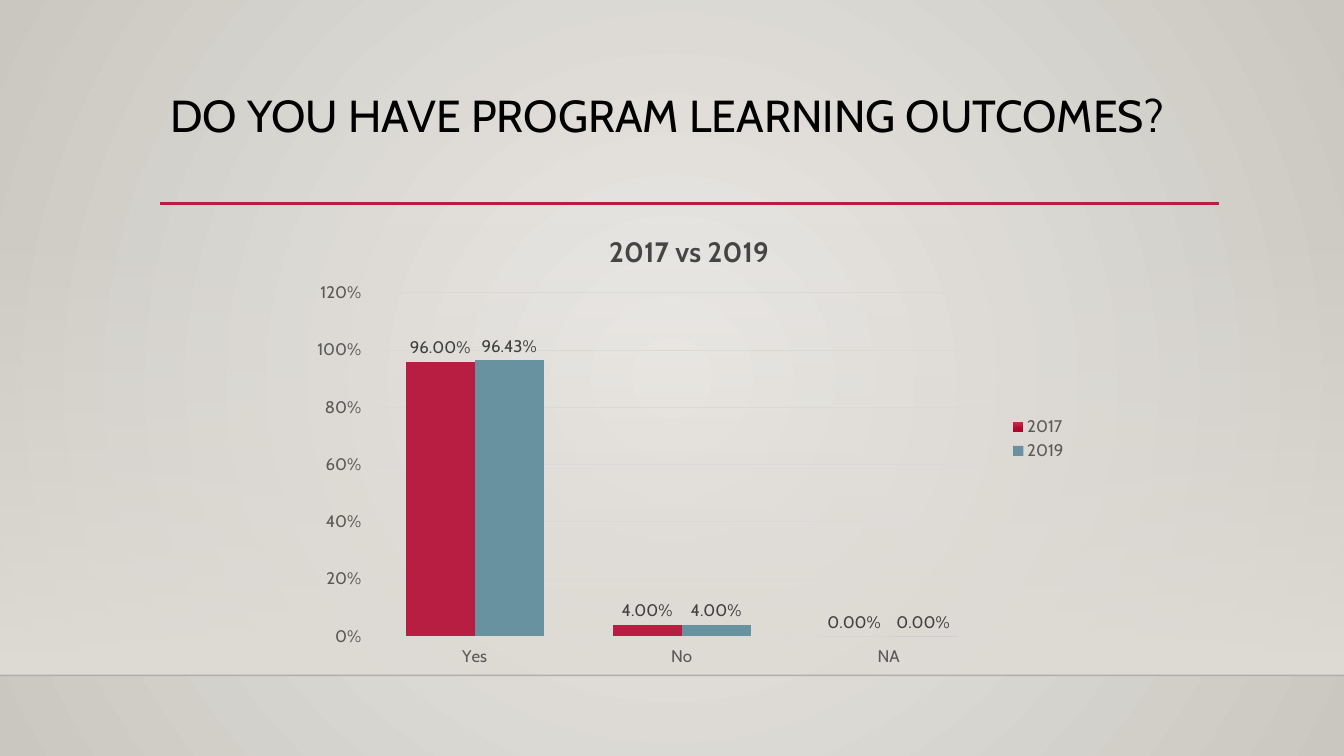
from lxml.etree import SubElement
from pptx import Presentation
from pptx.chart.data import CategoryChartData
from pptx.dml.color import RGBColor
from pptx.enum.chart import XL_CHART_TYPE, XL_LABEL_POSITION, XL_LEGEND_POSITION
from pptx.enum.shapes import MSO_CONNECTOR, MSO_SHAPE
from pptx.enum.text import MSO_ANCHOR
from pptx.oxml import parse_xml
from pptx.oxml.ns import nsdecls, qn
from pptx.util import Pt

FONT = "Cabin"
WIDTH, HEIGHT = 960, 540
RED, TEAL, SAND, GRID, GRAY = "B71E42", "6892A0", "DFDBD5", "D9D9D9", "595959"
LINEAR = '<a:lin ang="5400000" scaled="0"/>'
RADIAL = '<a:path path="circle"><a:fillToRect l="50000" t="50000" r="50000" b="50000"/></a:path>'


def color(value):
    return RGBColor.from_string(value)


def set_font(font, size, value, bold=False):
    font.name, font.size, font.bold = FONT, Pt(size), bold
    font.color.rgb = color(value)


def set_gradient(fill, parent, stops, direction):
    """Fill with (position, colour, opacity) stops, all in percent."""
    fill.solid()
    marks = "".join(
        f'<a:gs pos="{position * 1000}"><a:srgbClr val="{value}">'
        f'<a:alpha val="{opacity * 1000}"/></a:srgbClr></a:gs>'
        for position, value, opacity in stops)
    solid = parent.find(qn("a:solidFill"))
    parent.replace(solid, parse_xml(
        f'<a:gradFill {nsdecls("a")} rotWithShape="1">'
        f'<a:gsLst>{marks}</a:gsLst>{direction}</a:gradFill>'))


def add_rule(page, left, top, width, value, weight, opacity=100):
    rule = page.shapes.add_connector(
        MSO_CONNECTOR.STRAIGHT, Pt(left), Pt(top), Pt(left + width), Pt(top))
    rule.line.color.rgb = color(value)
    rule.line.width = Pt(weight)
    properties = rule._element.spPr
    if opacity < 100:
        shade = properties.find(".//" + qn("a:srgbClr"))
        SubElement(shade, qn("a:alpha"), val=str(opacity * 1000))
    SubElement(properties, qn("a:effectLst"))


def add_backdrop(page, left, top, width, height):
    # Radial page background
    fill = page.background.fill
    fill.solid()
    set_gradient(fill, page._element.find(".//" + qn("p:bgPr")),
                 [(0, "ECEAE7", 100), (100, "CAC7C1", 100)], RADIAL)
    # Band that fades in towards the floor line
    band = page.shapes.add_shape(
        MSO_SHAPE.RECTANGLE, Pt(left), Pt(top), Pt(width), Pt(height))
    band.shadow.inherit = False
    band.line.fill.background()
    set_gradient(band.fill, band._element.spPr,
                 [(0, SAND, 0), (100, SAND, 100)], LINEAR)
    add_rule(page, left, top + height, width, "000001", 1, opacity=20)


def add_heading(page, left, top, width, height, text):
    add_rule(page, left, top + height, width, RED, 2.5)
    box = page.shapes.add_textbox(Pt(left), Pt(top), Pt(width), Pt(height))
    box.text_frame.word_wrap = True
    box.text_frame.vertical_anchor = MSO_ANCHOR.TOP
    para = box.text_frame.paragraphs[0]
    para.text = text
    para.line_spacing = 0.9
    set_font(para.font, 32, "000000")


def layout(target, **places):
    """Return a manual chart layout with the given fractions."""
    inner = f'<c:layoutTarget val="{target}"/>' if target else ""
    modes = "".join(f'<c:{axis}Mode val="edge"/>' for axis in "xy")
    sizes = "".join(f'<c:{key} val="{part}"/>' for key, part in places.items())
    return parse_xml(f'<c:layout {nsdecls("c")}><c:manualLayout>'
                     f'{inner}{modes}{sizes}</c:manualLayout></c:layout>')


def set_layout(parent, new, index):
    for old in parent.findall(qn("c:layout")):
        parent.remove(old)
    parent.insert(index, new)


def add_outcome_chart(page, left, top, width, height):
    data = CategoryChartData(number_format="0.00%")
    data.categories = ["Yes", "No", "NA"]
    data.add_series("2017", [0.96, 0.04, 0])
    data.add_series("2019", [0.9643, 0.04, 0])
    chart = page.shapes.add_chart(
        XL_CHART_TYPE.COLUMN_CLUSTERED, Pt(left), Pt(top), Pt(width), Pt(height), data).chart
    set_font(chart.font, 10, "000000")

    # Title and legend
    chart.has_title = True
    para = chart.chart_title.text_frame.paragraphs[0]
    para.text = "2017 vs 2019"
    set_font(para.font, 20, "454545", bold=True)
    set_layout(chart.chart_title._element, layout("", x=0.39, y=0.05), 1)
    chart.has_legend = True
    chart.legend.position = XL_LEGEND_POSITION.RIGHT
    chart.legend.include_in_layout = False
    set_font(chart.legend.font, 12, GRAY)

    # Axes
    for axis in (chart.category_axis, chart.value_axis):
        set_font(axis.tick_labels.font, 12, GRAY)
    chart.category_axis.format.line.color.rgb = color(GRID)
    chart.category_axis.format.line.width = Pt(1)
    scale = chart.value_axis
    scale.minimum_scale, scale.maximum_scale, scale.major_unit = 0, 1.2, 0.2
    scale.tick_labels.number_format = "0%"
    scale.tick_labels.number_format_is_linked = False
    scale.format.line.fill.background()
    scale.major_gridlines.format.line.color.rgb = color(GRID)
    scale.major_gridlines.format.line.width = Pt(0.75)

    # Columns and their labels
    plot = chart.plots[0]
    plot.gap_width, plot.overlap, plot.vary_by_categories = 100, 0, False
    earlier, later = plot.series
    later.format.fill.solid()
    later.format.fill.fore_color.rgb = color(TEAL)
    fill = earlier.format.fill
    set_gradient(fill, earlier._element.find(qn("c:spPr")),
                 [(0, "C7304C", 100), (69, "B3062F", 100), (100, "AA062C", 100)], LINEAR)
    for index, value in enumerate([RED, RED, "CCC6BC"]):
        column = earlier.points[index].format.fill
        column.solid()
        column.fore_color.rgb = color(value)
    for series in plot.series:
        labels = series.data_labels
        labels.show_value = True
        labels.position = XL_LABEL_POSITION.OUTSIDE_END
        labels.number_format = "0.00%"
        labels.number_format_is_linked = False
        set_font(labels.font, 12, "404040")
    area = chart._chartSpace.find(".//" + qn("c:plotArea"))
    set_layout(area, layout("inner", x=0.09, y=0.19, w=0.8, h=0.73), 0)


def main():
    deck = Presentation()
    deck.slide_width, deck.slide_height = Pt(WIDTH), Pt(HEIGHT)
    page = deck.slides.add_slide(deck.slide_layouts[6])
    add_backdrop(page, 0, 159, WIDTH, 323.4)
    add_heading(page, 114.5, 63.4, 756.5, 82, "DO YOU HAVE PROGRAM LEARNING OUTCOMES?")
    add_outcome_chart(page, 215.3, 145.4, 554.4, 336.2)
    deck.save("out.pptx")


if __name__ == "__main__":
    main()
